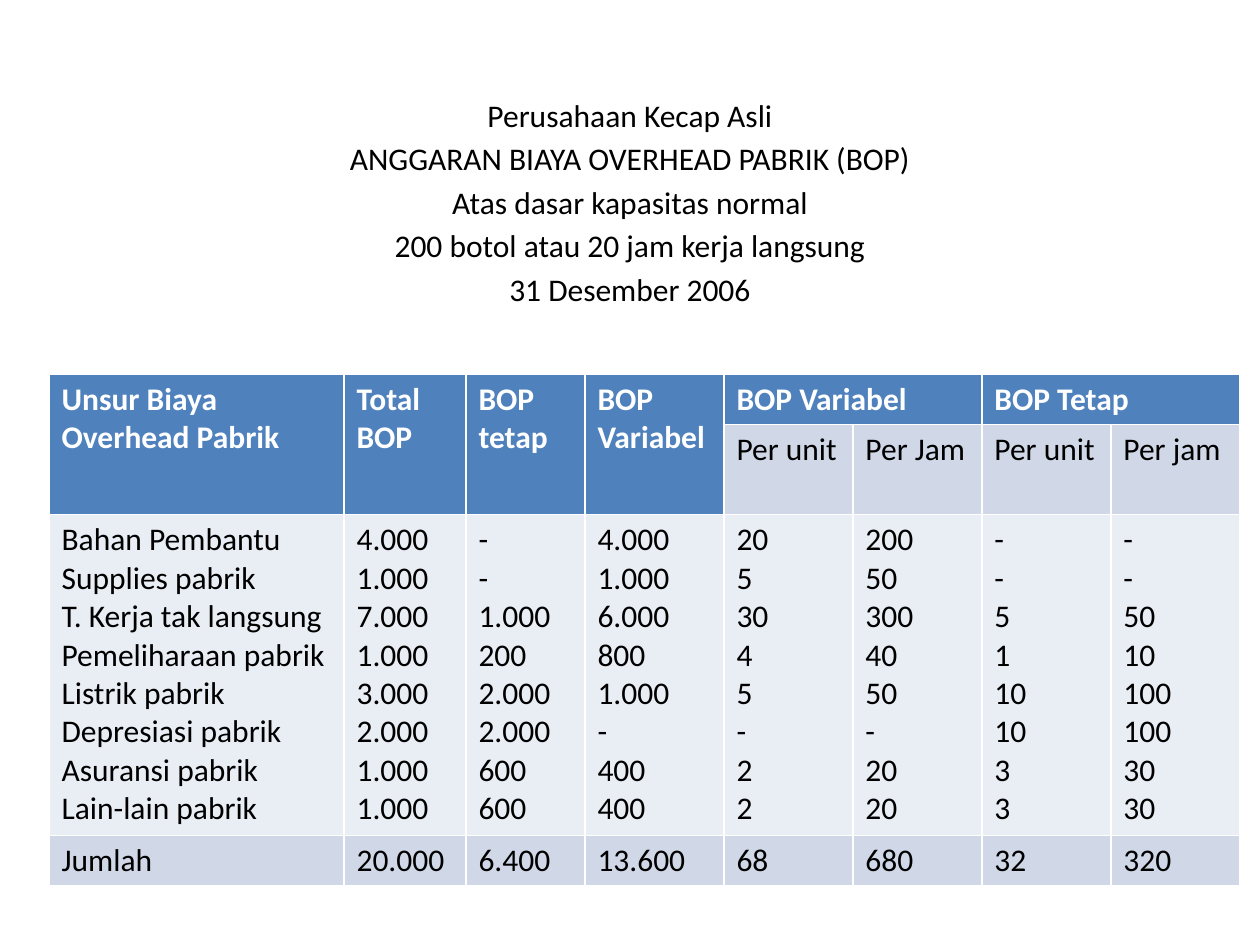
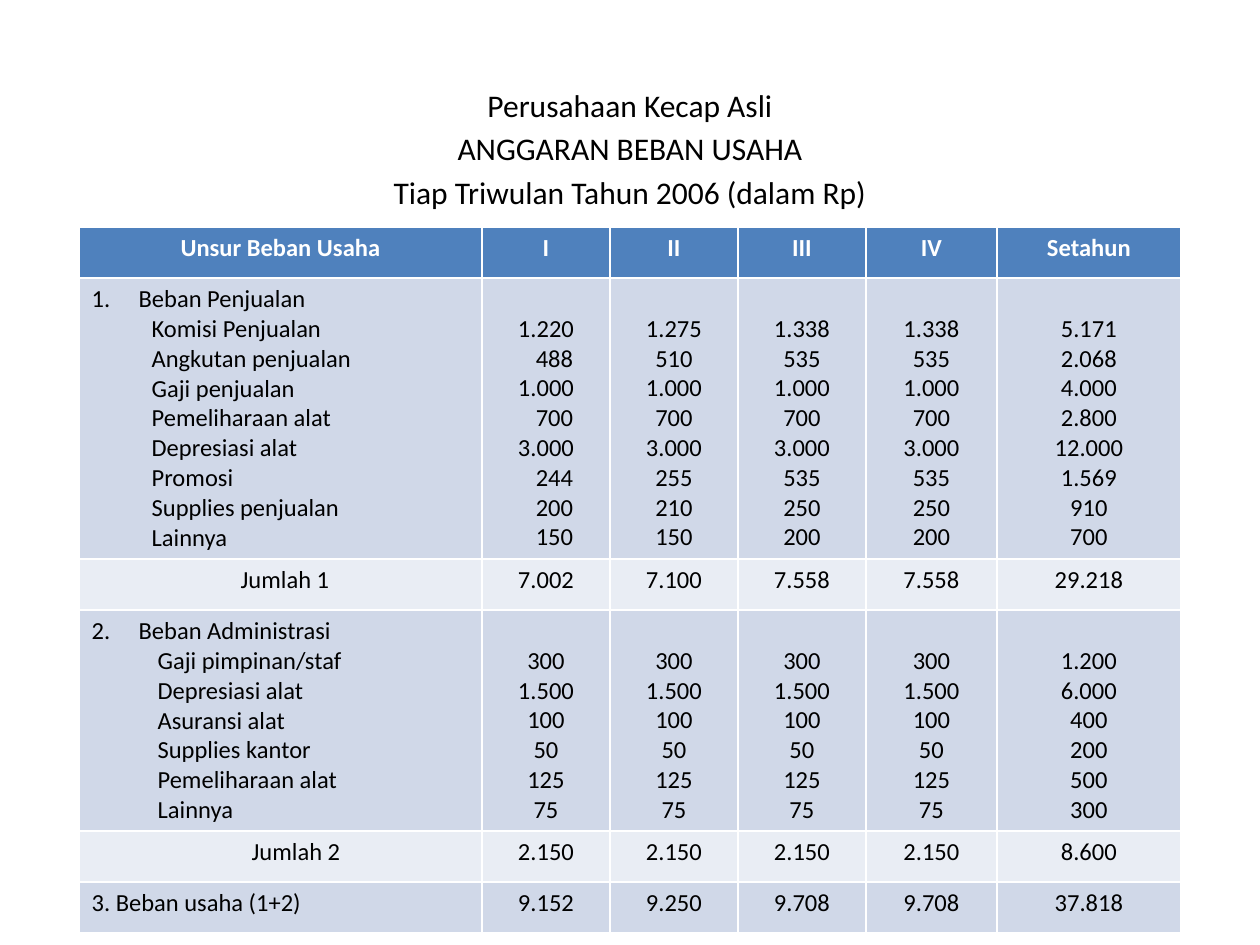
from pptx import Presentation
from pptx.dml.color import RGBColor
from pptx.enum.text import MSO_ANCHOR, PP_ALIGN
from pptx.oxml.xmlchemy import OxmlElement
from pptx.util import Pt

# ---- Shared look -----------------------------------------------------------
EMU_PER_PX = 914400 // 126
COLORS = {"header": "4F81BD", "dark": "D0D8E8", "light": "E9EDF4",
          "white": "FFFFFF", "black": "000000"}
FONT = "Calibri"
CELL_MARGIN = 6
NUMBER_INDENT = 47

# ---- Content: factory overhead budget --------------------------------------
OVERHEAD_TITLE = ["Perusahaan Kecap Asli", "ANGGARAN BIAYA OVERHEAD PABRIK (BOP)",
                  "Atas dasar kapasitas normal",
                  "200 botol atau 20 jam kerja langsung", "31 Desember 2006"]
OVERHEAD_HEADS = ["Unsur Biaya Overhead Pabrik", "Total BOP", "BOP tetap", "BOP Variabel"]
OVERHEAD_PAIRS = [("BOP Variabel", ["Per unit", "Per Jam"]),
                  ("BOP Tetap", ["Per unit", "Per jam"])]
OVERHEAD_ITEMS = [
    ("Bahan Pembantu", "4.000", "-", "4.000", "20", "200", "-", "-"),
    ("Supplies pabrik", "1.000", "-", "1.000", "5", "50", "-", "-"),
    ("T. Kerja tak langsung", "7.000", "1.000", "6.000", "30", "300", "5", "50"),
    ("Pemeliharaan pabrik", "1.000", "200", "800", "4", "40", "1", "10"),
    ("Listrik pabrik", "3.000", "2.000", "1.000", "5", "50", "10", "100"),
    ("Depresiasi pabrik", "2.000", "2.000", "-", "-", "-", "10", "100"),
    ("Asuransi pabrik", "1.000", "600", "400", "2", "20", "3", "30"),
    ("Lain-lain pabrik", "1.000", "600", "400", "2", "20", "3", "30"),
]
OVERHEAD_TOTAL = ("Jumlah", "20.000", "6.400", "13.600", "68", "680", "32", "320")
OVERHEAD_COLUMNS = [295, 122, 119, 139] + [129] * 4
OVERHEAD_ROWS = [50, 90, 321, 50]

# ---- Content: operating expense budget -------------------------------------
EXPENSE_TITLE = ["Perusahaan Kecap Asli", "ANGGARAN BEBAN USAHA",
                 "Tiap Triwulan Tahun 2006 (dalam Rp)"]
EXPENSE_HEADS = ["Unsur Beban Usaha", "I", "II", "III", "IV", "Setahun"]
EXPENSE_GROUPS = [
    {"name": "Beban Penjualan", "item_indent": 60, "short_indent": 17, "total_indent": 149,
     "items": [
         ("Komisi Penjualan", "1.220", "1.275", "1.338", "1.338", "5.171"),
         ("Angkutan penjualan", "488", "510", "535", "535", "2.068"),
         ("Gaji penjualan", "1.000", "1.000", "1.000", "1.000", "4.000"),
         ("Pemeliharaan alat", "700", "700", "700", "700", "2.800"),
         ("Depresiasi alat", "3.000", "3.000", "3.000", "3.000", "12.000"),
         ("Promosi", "244", "255", "535", "535", "1.569"),
         ("Supplies penjualan", "200", "210", "250", "250", "910"),
         ("Lainnya", "150", "150", "200", "200", "700")],
     "total": ("Jumlah 1", "7.002", "7.100", "7.558", "7.558", "29.218")},
    {"name": "Beban Administrasi", "item_indent": 66, "short_indent": 0, "total_indent": 160,
     "items": [
         ("Gaji pimpinan/staf", "300", "300", "300", "300", "1.200"),
         ("Depresiasi alat", "1.500", "1.500", "1.500", "1.500", "6.000"),
         ("Asuransi alat", "100", "100", "100", "100", "400"),
         ("Supplies kantor", "50", "50", "50", "50", "200"),
         ("Pemeliharaan alat", "125", "125", "125", "125", "500"),
         ("Lainnya", "75", "75", "75", "75", "300")],
     "total": ("Jumlah 2", "2.150", "2.150", "2.150", "2.150", "8.600")},
]
EXPENSE_TOTAL = ("3. Beban usaha (1+2)", "9.152", "9.250", "9.708", "9.708", "37.818")
EXPENSE_COLUMNS = [403, 128, 128, 128, 131, 184]
EXPENSE_ROWS = [51, 281, 51, 221, 51, 51]
EXPENSE_LINE = 30


def px(length):
    return length * EMU_PER_PX


def write(frame, lines, size=18, color="black", bold=False, align=PP_ALIGN.LEFT,
          indents=None, number=None, gap=0):
    """Write one paragraph per line; number turns the first into a list item."""
    for index, line in enumerate(lines):
        paragraph = frame.paragraphs[0] if index == 0 else frame.add_paragraph()
        paragraph.alignment = align
        if gap and index:
            paragraph.space_before = Pt(gap)
        properties = paragraph._p.get_or_add_pPr()
        if indents and indents[index]:
            properties.set("marL", str(px(indents[index])))
        if number and index == 0:
            properties.set("indent", str(-px(indents[0])))
            numbering = OxmlElement("a:buAutoNum")
            numbering.set("type", "arabicPeriod")
            numbering.set("startAt", str(number))
            properties.append(numbering)
        run = paragraph.add_run()
        run.text = line
        run.font.name, run.font.size, run.font.bold = FONT, Pt(size), bold
        run.font.color.rgb = RGBColor.from_string(COLORS[color])


def add_title(slide, lines, top, height):
    box = slide.shapes.add_textbox(px(63), px(top), px(1134), px(height))
    frame = box.text_frame
    frame.word_wrap = True
    frame.vertical_anchor = MSO_ANCHOR.TOP
    frame.margin_top = px(8)
    write(frame, lines, align=PP_ALIGN.CENTER, gap=3.2)


def add_grid(slide, left, top, columns, rows, fills):
    """Add a table with one fill per row."""
    table = slide.shapes.add_table(len(rows), len(columns), px(left), px(top),
                                   px(sum(columns)), px(sum(rows))).table
    table.horz_banding = False
    for column, width in zip(table.columns, columns):
        column.width = px(width)
    for row, height, fill in zip(table.rows, rows, fills):
        row.height = px(height)
        for cell in row.cells:
            paint(cell, fill)
    return table


def paint(cell, fill):
    cell.fill.solid()
    cell.fill.fore_color.rgb = RGBColor.from_string(COLORS[fill])


def build_overhead(slide):
    add_title(slide, OVERHEAD_TITLE, 88, 756)
    table = add_grid(slide, 49, 374, OVERHEAD_COLUMNS, OVERHEAD_ROWS,
                     ["header", "dark", "light", "dark"])
    head = {"color": "white", "bold": True}

    # Headings that span two rows, then headings that span two columns
    for column, text in enumerate(OVERHEAD_HEADS):
        cell = table.cell(0, column)
        paint(table.cell(1, column), "header")
        cell.merge(table.cell(1, column))
        write(cell.text_frame, [text], **head)
    for pair, (text, units) in enumerate(OVERHEAD_PAIRS):
        first = len(OVERHEAD_HEADS) + 2 * pair
        cell = table.cell(0, first)
        cell.merge(table.cell(0, first + 1))
        write(cell.text_frame, [text], **head)
        for offset, unit in enumerate(units):
            write(table.cell(1, first + offset).text_frame, [unit])

    # Items share one tall row
    for column, values in enumerate(zip(*OVERHEAD_ITEMS)):
        write(table.cell(2, column).text_frame, values)
        write(table.cell(3, column).text_frame, [OVERHEAD_TOTAL[column]])


def write_expense_row(table, row, values, indent=0, **style):
    for column, value in enumerate(values):
        options = {"align": PP_ALIGN.CENTER, **style} if column else {"indents": [indent], **style}
        write(table.cell(row, column).text_frame, [value], size=14, **options)


def build_expenses(slide):
    add_title(slide, EXPENSE_TITLE, 78, 765)
    table = add_grid(slide, 79, 227, EXPENSE_COLUMNS, EXPENSE_ROWS,
                     ["header", "dark", "light", "dark", "light", "dark"])
    write_expense_row(table, 0, EXPENSE_HEADS, color="white", bold=True,
                      align=PP_ALIGN.CENTER)

    # Each group is a tall item row followed by its total
    for number, group in enumerate(EXPENSE_GROUPS, start=1):
        row = 2 * number - 1
        names, *amounts = zip(*group["items"])
        write(table.cell(row, 0).text_frame, [group["name"], *names], size=14, number=number,
              indents=[NUMBER_INDENT] + [group["item_indent"]] * len(names))
        for column, values in enumerate(amounts, start=1):
            cell = table.cell(row, column)
            cell.margin_top = px(CELL_MARGIN + EXPENSE_LINE)
            short = group["short_indent"] if column == 1 else 0
            write(cell.text_frame, values, size=14, align=PP_ALIGN.CENTER,
                  indents=[short if len(value) < 5 else 0 for value in values])
        write_expense_row(table, row + 1, group["total"], indent=group["total_indent"])
    write_expense_row(table, len(EXPENSE_ROWS) - 1, EXPENSE_TOTAL)


def main():
    deck = Presentation()
    deck.slide_width, deck.slide_height = px(1260), px(945)
    blank = deck.slide_layouts[6]
    for build in (build_overhead, build_expenses):
        build(deck.slides.add_slide(blank))
    deck.save("out.pptx")


if __name__ == "__main__":
    main()
